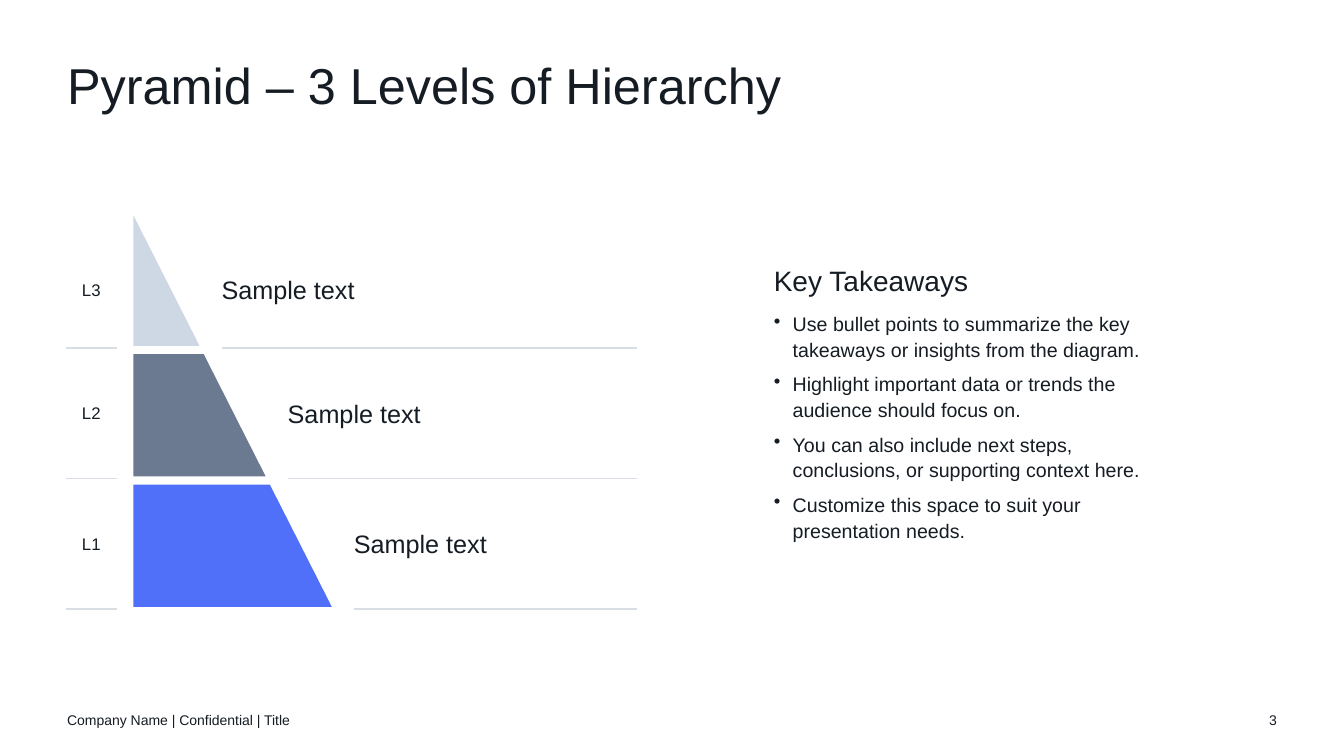
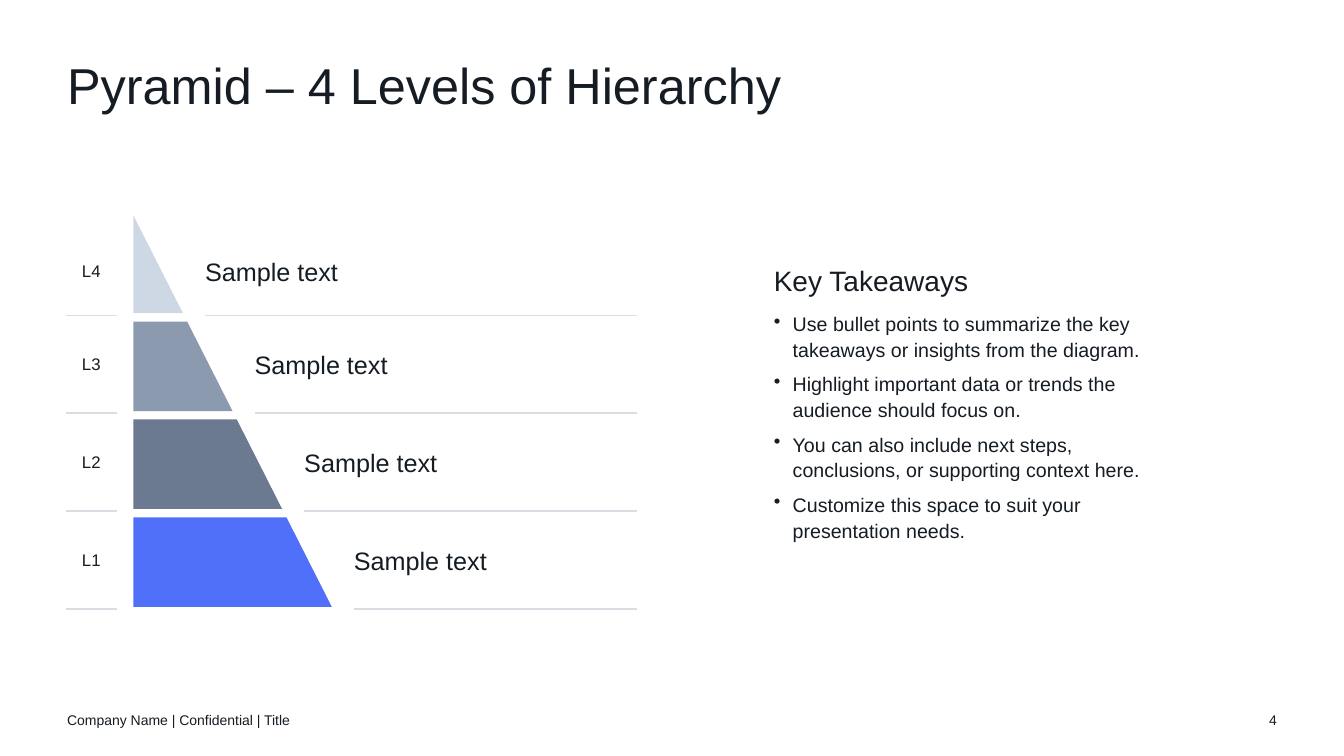
import pptx
import pptx.dml.color
import pptx.enum.shapes
import pptx.enum.text
import pptx.oxml.ns
import pptx.util
from lxml import etree

SCALE = 9525
FONT = "Arial"
INK = "151C23"
RULE = "D9DEE5"
LIGHT, MID, DARK, ACCENT = "CED8E4", "8C9AB0", "6B7A90", "5070FA"
LEFT, TOP, WIDTH, HEIGHT, GAP = 127, 205, 189, 373, 8
RULE_DROP, LABEL_GAP, LABEL_H = 2, 21, 29
MARGIN = 64
BULLET_INDENT = 18
TAKEAWAYS = [
    "Use bullet points to summarize the key takeaways or insights from the diagram.",
    "Highlight important data or trends the audience should focus on.",
    "You can also include next steps, conclusions, or supporting context here.",
    "Customize this space to suit your presentation needs.",
]
SLIDES = [
    ("Pyramid – 3 Levels of Hierarchy", 3, [LIGHT, DARK, ACCENT]),
    ("Pyramid – 4 Levels of Hierarchy", 4, [LIGHT, MID, DARK, ACCENT]),
]

rgb = pptx.dml.color.RGBColor.from_string
qn = pptx.oxml.ns.qn
ALIGN = pptx.enum.text.PP_ALIGN
ANCHOR = pptx.enum.text.MSO_ANCHOR


def px(n):
    return pptx.util.Emu(round(n * SCALE))


def add_text(s, box, lines, size, align=ALIGN.LEFT, anchor=ANCHOR.MIDDLE):
    tf = s.shapes.add_textbox(*[px(n) for n in box]).text_frame
    tf.word_wrap = True
    tf.vertical_anchor = anchor
    tf.margin_left = tf.margin_top = tf.margin_right = tf.margin_bottom = 0
    tf.text = "\n".join(lines)
    for p in tf.paragraphs:
        p.alignment = align
        p.font.name = FONT
        p.font.size = pptx.util.Pt(size)
        p.font.color.rgb = rgb(INK)
    return tf


prs = pptx.Presentation()
prs.slide_width, prs.slide_height = px(1280), px(720)

for title, number, colors in SLIDES:
    s = prs.slides.add_slide(prs.slide_layouts[6])
    tf = add_text(s, (MARGIN, 58, 1152, 58), [title], 36, anchor=ANCHOR.TOP)
    tf.paragraphs[0].line_spacing = 0.9
    add_text(s, (MARGIN, 667, 432, 38), ["Company Name | Confidential | Title"], 10)
    add_text(s, (1168, 667, 48, 38), [str(number)], 10, ALIGN.RIGHT)

    tf = add_text(s, (737, 173, 383, 418), ["Key Takeaways"] + TAKEAWAYS, 14)
    for p in tf.paragraphs:
        p.line_spacing = 1.1
        p.space_before = pptx.util.Pt(6)
    heading, *bullets = tf.paragraphs
    heading.font.size = pptx.util.Pt(20)
    heading.space_after = pptx.util.Pt(3)
    for p in bullets:
        pPr = p._p.get_or_add_pPr()
        pPr.set("marL", str(px(BULLET_INDENT)))
        pPr.set("indent", str(-px(BULLET_INDENT)))
        bu = etree.Element(qn("a:buChar"), char="•")
        pPr.find(qn("a:defRPr")).addprevious(bu)

    level_rules = s.shapes.add_group_shape()
    pyramid = s.shapes.add_group_shape()
    step = HEIGHT / len(colors)
    for i, color in enumerate(colors):
        row_top = TOP + i * step
        bottom = row_top + step
        right = LEFT + WIDTH * (i + 1) / len(colors)
        points = [(LEFT, bottom), (right, bottom)]
        if i == 0:
            band_top = TOP
            middle = TOP + 0.57 * step
        else:
            band_top = row_top + GAP
            middle = row_top + step / 2 + RULE_DROP
            points.append((LEFT + WIDTH * (band_top - TOP) / HEIGHT, band_top))

        fb = pyramid.shapes.build_freeform(px(LEFT), px(band_top), scale=1)
        fb.add_line_segments([(px(x), px(y)) for x, y in points], close=True)
        sp = fb.convert_to_shape()
        sp.shadow.inherit = False
        sp.fill.solid()
        sp.fill.fore_color.rgb = rgb(color)
        sp.line.fill.background()

        label_x = right + LABEL_GAP
        y = px(bottom + RULE_DROP)
        for shapes, x1, x2 in [(level_rules.shapes, 63, 111), (s.shapes, label_x, 607)]:
            rule = shapes.add_connector(
                pptx.enum.shapes.MSO_CONNECTOR.STRAIGHT, px(x1), y, px(x2), y)
            rule.line.color.rgb = rgb(RULE)
            rule.line.width = pptx.util.Pt(1)
            etree.SubElement(rule._element.spPr, qn("a:effectLst"))

        label_y = middle - LABEL_H / 2
        add_text(s, (label_x, label_y, 269, LABEL_H), ["Sample text"], 18)
        add_text(s, (68, label_y, 38, LABEL_H), [f"L{len(colors) - i}"], 12, ALIGN.CENTER)

prs.save("out.pptx")
